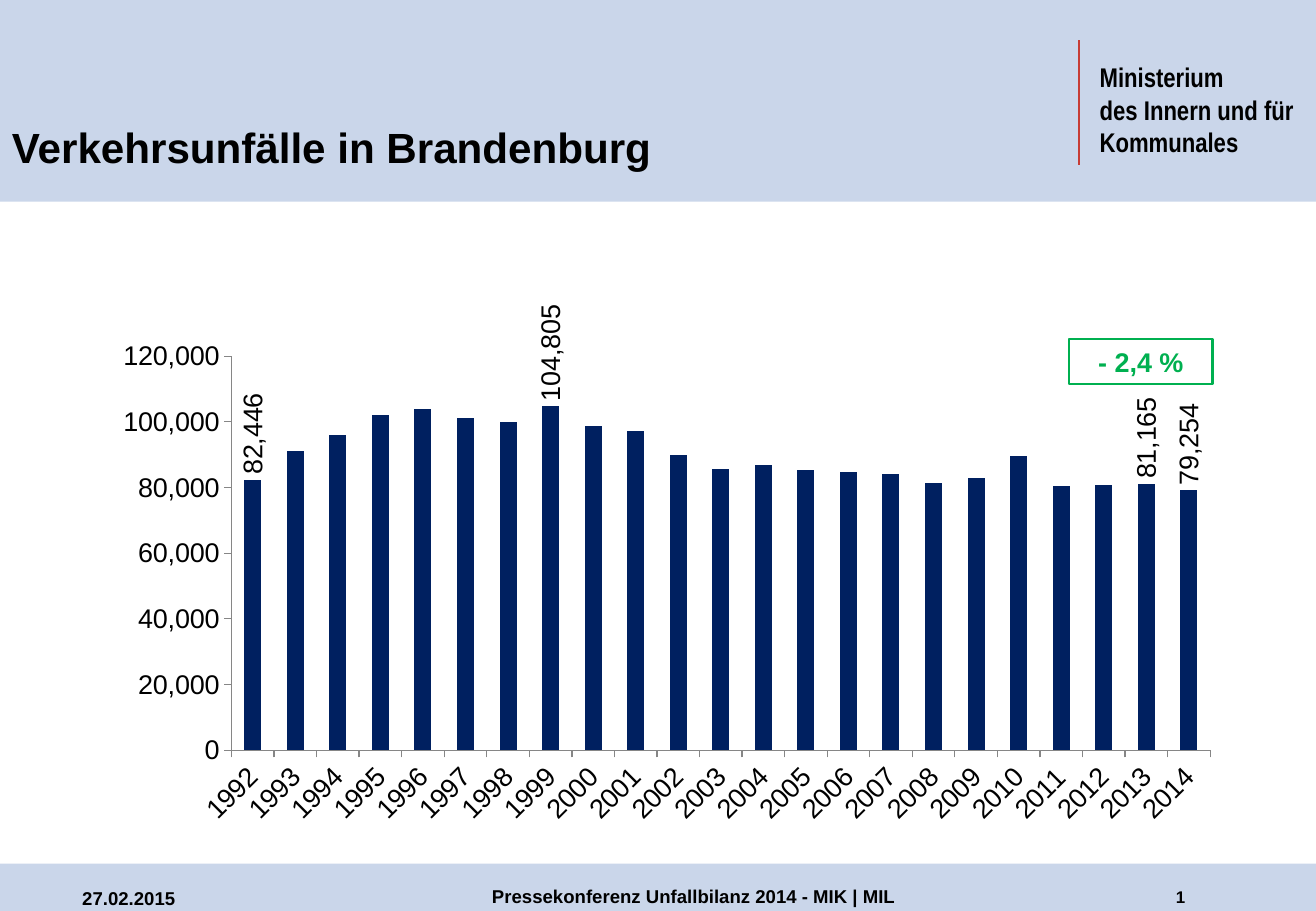
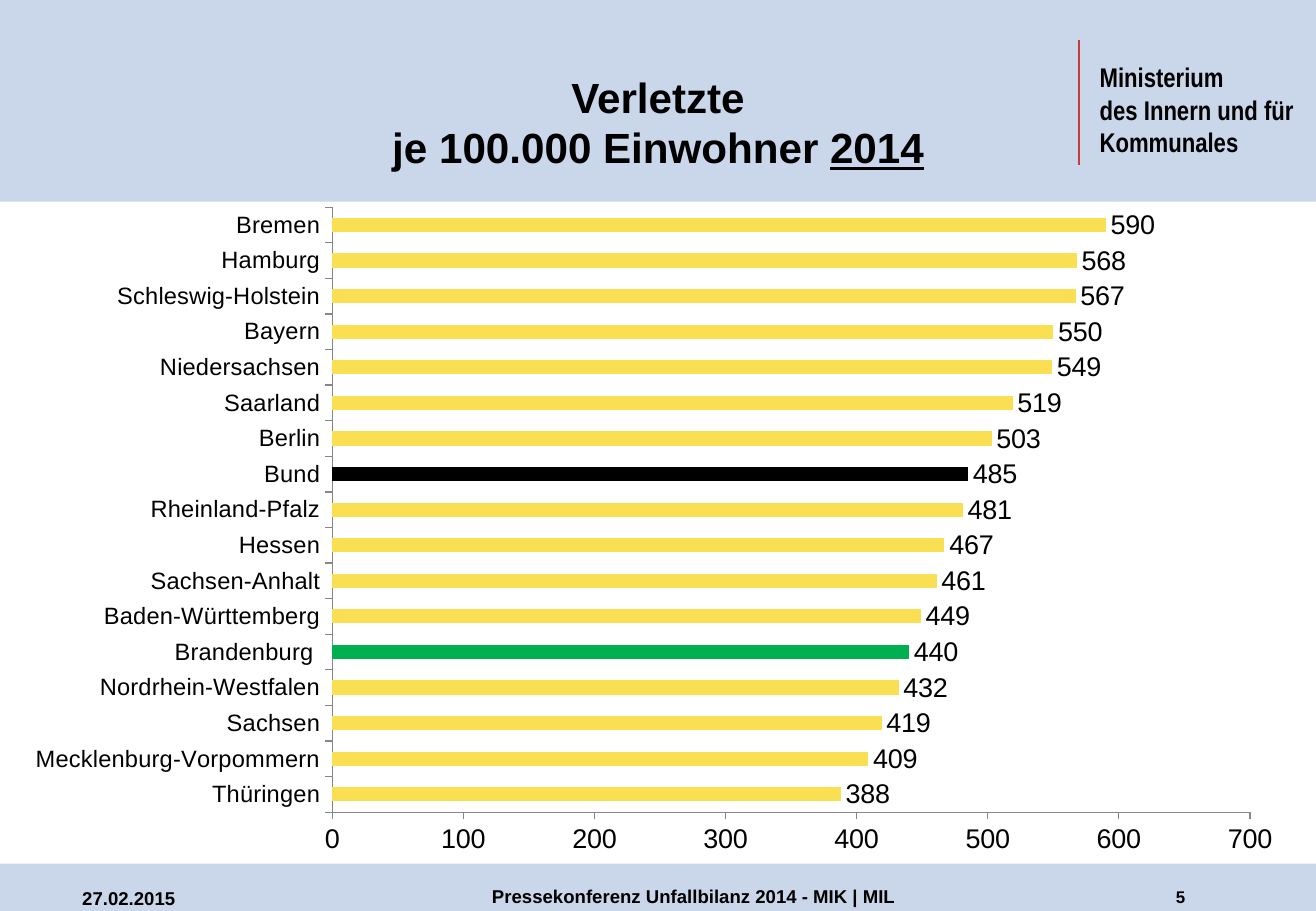
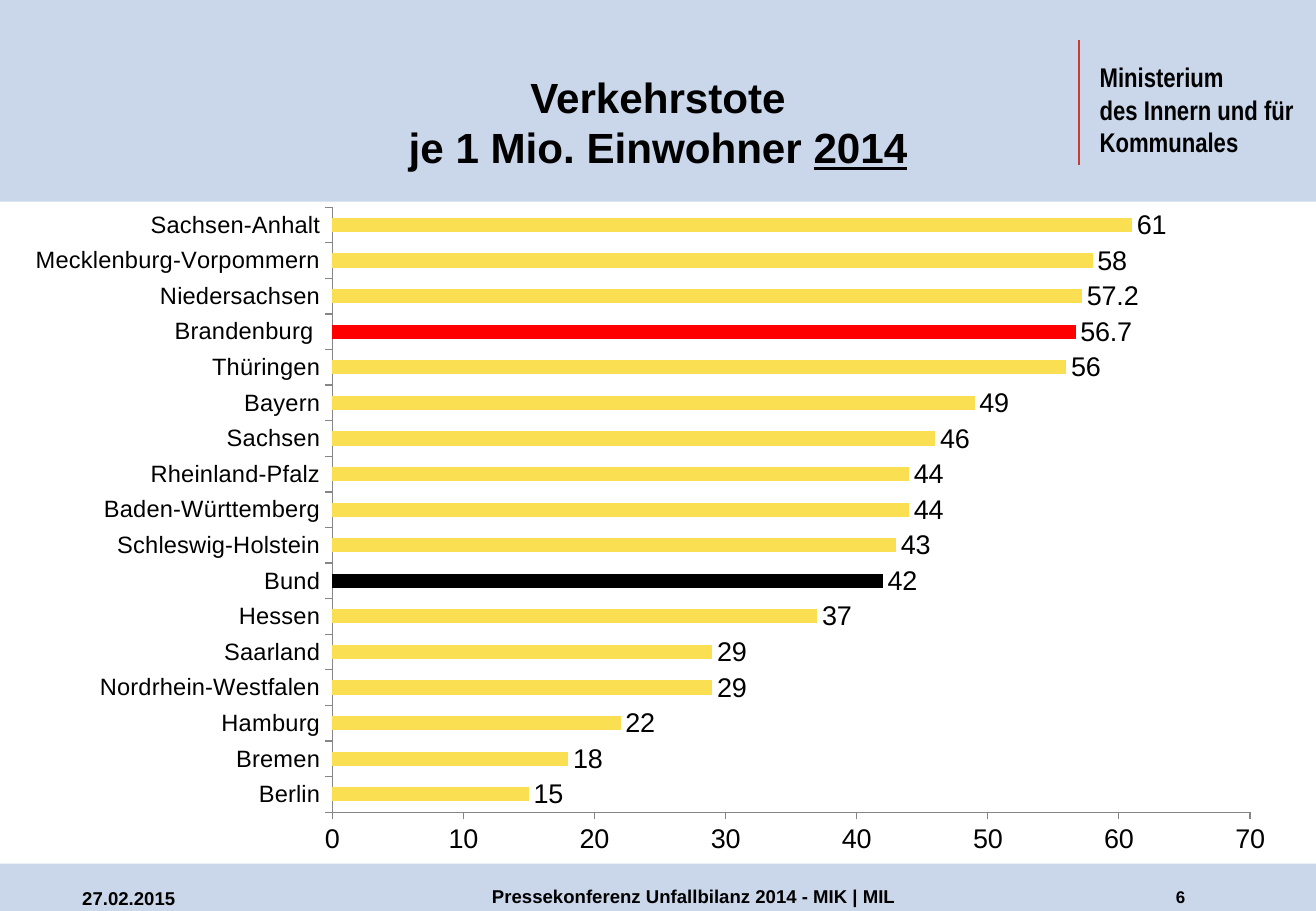
from lxml import etree
from pptx import Presentation
from pptx.chart.data import CategoryChartData
from pptx.dml.color import RGBColor
from pptx.enum.chart import XL_CHART_TYPE, XL_LABEL_POSITION, XL_TICK_MARK
from pptx.enum.shapes import MSO_CONNECTOR, MSO_SHAPE
from pptx.enum.text import MSO_ANCHOR, PP_ALIGN
from pptx.oxml import parse_xml
from pptx.oxml.ns import nsdecls, qn
from pptx.util import Cm, Pt

COLORS = {
    "text": "000000",
    "band": "2E5DAD",
    "rule": "C73C35",
    "axis": "868686",
    "column": "002060",
    "bar": "FBDF53",
    "good": "00B050",
    "bad": "FF0000",
    "nation": "000000",
}
FONT = "Arial"
WIDTH, HEIGHT = 27.51, 19.05
HEADER = (0, 0, WIDTH, 4.22)
FOOTER = (0, 18.06, WIDTH, 0.99)
COLUMN_BOX = (1.8, 6.07, 23.93, 11.4)
BAR_BOX = (0.56, 4.32, 26.39, 14.12)
BAR_PLOT = (0.242, 0.001, 0.727, 0.896)
NATION, STATE = "Bund", "Brandenburg "

ACCIDENTS = [
    82446, 91227, 95863, 102223, 103892, 101178, 100079, 104805,
    98702, 97057, 89783, 85663, 86771, 85298, 84675, 84105,
    81255, 82889, 89629, 80574, 80854, 81165, 79254,
]
INJURED = {
    "Thüringen": 388, "Mecklenburg-Vorpommern": 409, "Sachsen": 419,
    "Nordrhein-Westfalen": 432, STATE: 440, "Baden-Württemberg": 449,
    "Sachsen-Anhalt": 461, "Hessen": 467, "Rheinland-Pfalz": 481,
    NATION: 485, "Berlin": 503, "Saarland": 519, "Niedersachsen": 549,
    "Bayern": 550, "Schleswig-Holstein": 567, "Hamburg": 568, "Bremen": 590,
}
KILLED = {
    "Berlin": 15, "Bremen": 18, "Hamburg": 22, "Nordrhein-Westfalen": 29,
    "Saarland": 29, "Hessen": 37, NATION: 42, "Schleswig-Holstein": 43,
    "Baden-Württemberg": 44, "Rheinland-Pfalz": 44, "Sachsen": 46,
    "Bayern": 49, "Thüringen": 56, STATE: 56.7, "Niedersachsen": 57.2,
    "Mecklenburg-Vorpommern": 58, "Sachsen-Anhalt": 61,
}


def rgb(name):
    return RGBColor.from_string(COLORS[name])


def place(box):
    return [Cm(v) for v in box]


def set_font(font, size, color="text", name=FONT, bold=None):
    font.size, font.name, font.bold = Pt(size), name, bold
    font.color.rgb = rgb(color)


def add_text(s, box, text, size, underlined="", color="text", font=FONT,
             align=PP_ALIGN.LEFT, anchor=MSO_ANCHOR.TOP, insets=None, border=None):
    """Bold text in a box; a newline is a line break."""
    sp = s.shapes.add_textbox(*place(box))
    tf = sp.text_frame
    tf.word_wrap, tf.vertical_anchor = True, anchor
    if insets:
        (tf.margin_left, tf.margin_top,
         tf.margin_right, tf.margin_bottom) = place(insets)
    if border:
        sp.line.color.rgb, sp.line.width = rgb(border), Pt(1.5)
    p = tf.paragraphs[0]
    p.alignment = align
    for i, line in enumerate(text.split("\n")):
        if i:
            p.add_line_break()
        r = p.add_run()
        r.text = line
        set_font(r.font, size, color, font, True)
    if underlined:
        r = p.add_run()
        r.text = underlined
        set_font(r.font, size, color, font, True)
        r.font.underline = True
    return sp


def add_band(s, box):
    sp = s.shapes.add_shape(MSO_SHAPE.RECTANGLE, *place(box))
    sp.shadow.inherit = False
    sp.fill.solid()
    sp.fill.fore_color.rgb = rgb("band")
    sp.line.fill.background()
    clr = sp._element.spPr.find(qn("a:solidFill"))[0]
    etree.SubElement(clr, qn("a:alpha")).set("val", "25000")


def add_header(s, box, title, underlined, align):
    x, y, w, h = box
    add_band(s, box)
    # Ministry name with its red rule
    add_text(s, (x + w - 4.9, y + 1.27, 4.9, 2.06),
             "Ministerium\ndes Innern und für Kommunales", 16,
             font="Arial Narrow", insets=(0.38, 0, 0.3, 0))
    rule_x = x + w - 4.95
    rule = s.shapes.add_connector(
        MSO_CONNECTOR.STRAIGHT, *place((rule_x, y + 0.84, rule_x, y + 3.45)))
    rule.line.color.rgb, rule.line.width = rgb("rule"), Pt(1.5)
    etree.SubElement(rule._element.spPr, qn("a:effectLst"))
    # Title
    add_text(s, (x, y, w, h - 0.49), title, 25, underlined,
             align=align, anchor=MSO_ANCHOR.BOTTOM)


def add_footer(s, box, number):
    x, y, w, h = box
    add_band(s, box)
    add_text(s, (x + w - 3.18, y + 0.36, 1.9, 0.63), str(number), 10)
    add_text(s, (x + 1.47, y + 0.36, 3.18, 0.61), "27.02.2015", 11)
    add_text(s, (x + 4.88, y + 0.33, 19.25, 0.66),
             "Pressekonferenz Unfallbilanz 2014 - MIK | MIL", 11,
             align=PP_ALIGN.CENTER)


def add_frame(prs, number, title, underlined="", align=PP_ALIGN.CENTER):
    s = prs.slides.add_slide(prs.slide_layouts[6])
    add_header(s, HEADER, title, underlined, align)
    add_footer(s, FOOTER, number)
    return s


def set_plot_area(chart, area):
    plot_area = chart._chartSpace.chart.plotArea
    for old in plot_area.findall(qn("c:layout")):
        plot_area.remove(old)
    sizes = "".join(f'<c:{k} val="{v}"/>' for k, v in zip("xywh", area))
    plot_area.insert(0, parse_xml(
        f'<c:layout {nsdecls("c")}><c:manualLayout><c:layoutTarget val="inner"/>'
        f'<c:xMode val="edge"/><c:yMode val="edge"/>{sizes}'
        '</c:manualLayout></c:layout>'))


def add_bars(s, box, kind, values, area, color, top, step, cat_size, fmt="General"):
    data = CategoryChartData(number_format=fmt)
    data.categories = list(values)
    data.add_series("Series 1", list(values.values()))
    chart = s.shapes.add_chart(kind, *place(box), data).chart
    chart.has_title = chart.has_legend = False
    set_font(chart.font, 18)
    set_plot_area(chart, area)
    # Axes
    for axis, size in ((chart.category_axis, cat_size), (chart.value_axis, 16)):
        axis.has_major_gridlines = False
        axis.major_tick_mark = XL_TICK_MARK.OUTSIDE
        axis.minor_tick_mark = XL_TICK_MARK.NONE
        axis.format.line.color.rgb = rgb("axis")
        axis.format.line.width = Pt(0.75)
        set_font(axis.tick_labels.font, size)
    axis.minimum_scale, axis.maximum_scale, axis.major_unit = 0, top, step
    axis.tick_labels.number_format = fmt
    axis.tick_labels.number_format_is_linked = False
    # Bars
    plot = chart.plots[0]
    plot.gap_width, plot.vary_by_categories = 150, False
    ser = plot.series[0]
    ser.invert_if_negative = False
    ser.format.fill.solid()
    ser.format.fill.fore_color.rgb = rgb(color)
    return chart, ser


def format_label(label):
    set_font(label.font, 16)
    label.position = XL_LABEL_POSITION.OUTSIDE_END


def add_year_slide(prs):
    s = add_frame(prs, 1, "Verkehrsunfälle in Brandenburg", align=PP_ALIGN.LEFT)
    values = {str(year): n for year, n in enumerate(ACCIDENTS, 1992)}
    chart, ser = add_bars(s, COLUMN_BOX, XL_CHART_TYPE.COLUMN_CLUSTERED, values,
                          (0.127, 0.121, 0.855, 0.723), "column",
                          120000, 20000, 16, "#,##0")
    # Slanted years, upright labels on selected columns
    cat_body = chart.category_axis._element.xpath("c:txPr/a:bodyPr")[0]
    cat_body.set("rot", "-2700000")
    ser.data_labels.show_value = False
    for year in ("1992", "1999", "2013", "2014"):
        format_label(ser.points[list(values).index(year)].data_label)
    for body in ser._element.xpath("c:dLbls/c:dLbl/c:txPr/a:bodyPr"):
        body.set("rot", "-5400000")
        body.set("vert", "horz")
    # Change from the year before
    x, y, w, h = COLUMN_BOX
    add_text(s, (x + w - 3.38, y + 1.02, 3, 0.94), "- 2,4 %", 16, color="good",
             align=PP_ALIGN.CENTER, anchor=MSO_ANCHOR.MIDDLE, border="good")


def add_state_slide(prs, number, title, values, top, state_color):
    s = add_frame(prs, number, title, "2014")
    chart, ser = add_bars(s, BAR_BOX, XL_CHART_TYPE.BAR_CLUSTERED, values,
                          BAR_PLOT, "bar", top, top // 7, 14)
    ser.data_labels.show_value = True
    format_label(ser.data_labels)
    for name, color in ((NATION, "nation"), (STATE, state_color)):
        fill = ser.points[list(values).index(name)].format.fill
        fill.solid()
        fill.fore_color.rgb = rgb(color)


def main():
    prs = Presentation()
    prs.slide_width, prs.slide_height = Cm(WIDTH), Cm(HEIGHT)
    add_year_slide(prs)
    add_state_slide(prs, 5, "Verletzte\nje 100.000 Einwohner ", INJURED, 700, "good")
    add_state_slide(prs, 6, "Verkehrstote\nje 1 Mio. Einwohner ", KILLED, 70, "bad")
    prs.save("out.pptx")


if __name__ == "__main__":
    main()
